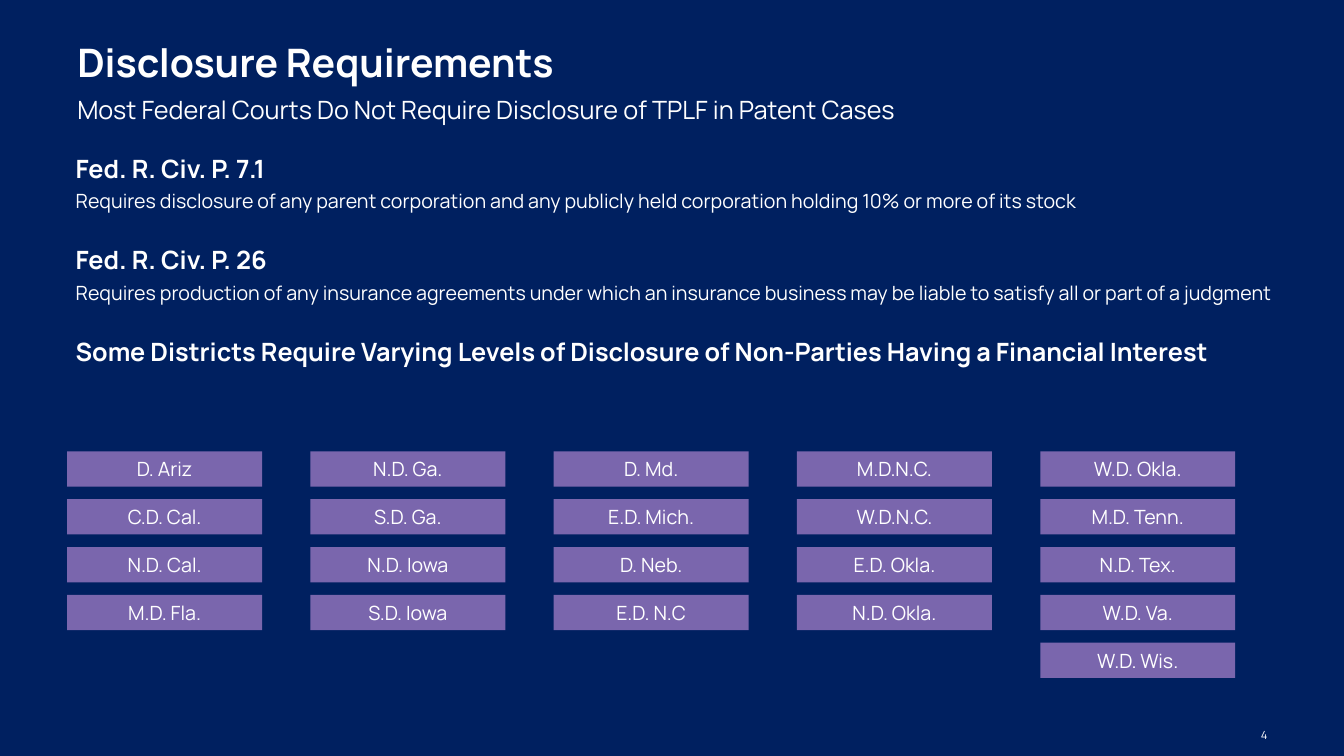
from pptx import Presentation
from pptx.dml.color import RGBColor
from pptx.enum.shapes import MSO_SHAPE as SHAPE
from pptx.enum.text import MSO_ANCHOR as ANCHOR, MSO_AUTO_SIZE as AUTOSIZE, PP_ALIGN as ALIGN
from pptx.oxml.ns import qn
from pptx.util import Inches, Pt

NAVY = RGBColor(0x00, 0x20, 0x60)
PURPLE = RGBColor(0x7A, 0x66, 0xAD)
WHITE = RGBColor(0xFF, 0xFF, 0xFF)

RULES = [
    ("Fed. R. Civ. P. 7.1",
     "Requires disclosure of any parent corporation and any publicly held "
     "corporation holding 10% or more of its stock"),
    ("Fed. R. Civ. P. 26",
     "Requires production of any insurance agreements under which an insurance "
     "business may be liable to satisfy all or part of a judgment"),
    ("Some Districts Require Varying Levels of Disclosure of Non-Parties "
     "Having a Financial Interest", None),
]

DISTRICTS = [
    ["D. Ariz", "C.D. Cal.", "N.D. Cal.", "M.D. Fla."],
    ["N.D. Ga.", "S.D. Ga.", "N.D. Iowa", "S.D. Iowa"],
    ["D. Md.", "E.D. Mich.", "D. Neb.", "E.D. N.C"],
    ["M.D.N.C.", "W.D.N.C.", "E.D. Okla.", "N.D. Okla."],
    ["W.D. Okla.", "M.D. Tenn.", "N.D. Tex.", "W.D. Va.", "W.D. Wis."],
]


class Deck:
    """Slide style and current slide; boxes are percentages of the slide size."""

    font = "Manrope"

    def __init__(self):
        self.prs = Presentation()
        self.prs.slide_width, self.prs.slide_height = Inches(13.33), Inches(7.5)

    def add_slide(self):
        self.slide = self.prs.slides.add_slide(self.prs.slide_layouts[3])
        fill = self.slide.background.fill
        fill.solid()
        fill.fore_color.rgb = NAVY

    def box(self, x, y, w, h):
        sw, sh = self.prs.slide_width, self.prs.slide_height
        return [round(v * size / 100) for v, size in ((x, sw), (y, sh), (w, sw), (h, sh))]

    def set_text(self, p, text, size, bold=False, align=ALIGN.LEFT):
        p.text = text
        p.alignment = align
        for r in p.runs:
            r.font.name, r.font.size, r.font.bold = self.font, Pt(size), bold
            r.font.color.rgb = WHITE

    def placeholder(self, idx, *area):
        sp = self.slide.placeholders[idx]
        sp.left, sp.top, sp.width, sp.height = self.box(*area)
        sp.text_frame.word_wrap = True
        sp.text_frame.auto_size = AUTOSIZE.NONE
        return sp.text_frame

    def title(self, text, *area):
        self.set_text(self.placeholder(0, *area).paragraphs[0], text, 28, bold=True)

    def body(self, idx, lines, *area):
        """Fill a body placeholder with (text, size, bold, space before) lines."""
        tf = self.placeholder(idx, *area)
        for i, (text, size, bold, space) in enumerate(lines):
            p = tf.add_paragraph() if i else tf.paragraphs[0]
            pPr = p._p.get_or_add_pPr()
            pPr.set("marL", "0")
            pPr.set("indent", "0")
            pPr.append(pPr.makeelement(qn("a:buNone"), {}))
            p.line_spacing, p.space_before = 0.9, Pt(space)
            self.set_text(p, text, size, bold)

    def tile(self, text, *area):
        sp = self.slide.shapes.add_shape(SHAPE.RECTANGLE, *self.box(*area))
        sp.shadow.inherit = False
        sp.fill.solid()
        sp.fill.fore_color.rgb = PURPLE
        sp.line.fill.background()
        sp.text_frame.vertical_anchor = ANCHOR.MIDDLE
        self.set_text(sp.text_frame.paragraphs[0], text, 14, align=ALIGN.CENTER)

    def page_number(self, text, *area):
        tf = self.slide.shapes.add_textbox(*self.box(*area)).text_frame
        tf.word_wrap = True
        self.set_text(tf.paragraphs[0], text, 8, align=ALIGN.RIGHT)


def main():
    deck = Deck()
    deck.add_slide()
    deck.title("Disclosure Requirements", 5, 4, 90, 8.27)
    subtitle = "Most Federal Courts Do Not Require Disclosure of TPLF in Patent Cases"
    deck.body(1, [(subtitle, 18, False, 0)], 5, 12.27, 90, 5.33)

    lines = []
    for heading, detail in RULES:
        lines.append((heading, 18, True, 25 if lines else 0))
        if detail:
            lines.append((detail, 14, False, 6))
    deck.body(2, lines, 4.88, 20, 92, 37.87)

    for col, names in enumerate(DISTRICTS):
        for row, name in enumerate(names):
            deck.tile(name, 5 + 18.1 * col, 59.7 + 6.33 * row, 14.5, 4.67)

    deck.page_number("4", 75.4, 95.73, 19.65, 3.2)
    deck.prs.save("out.pptx")


if __name__ == "__main__":
    main()
